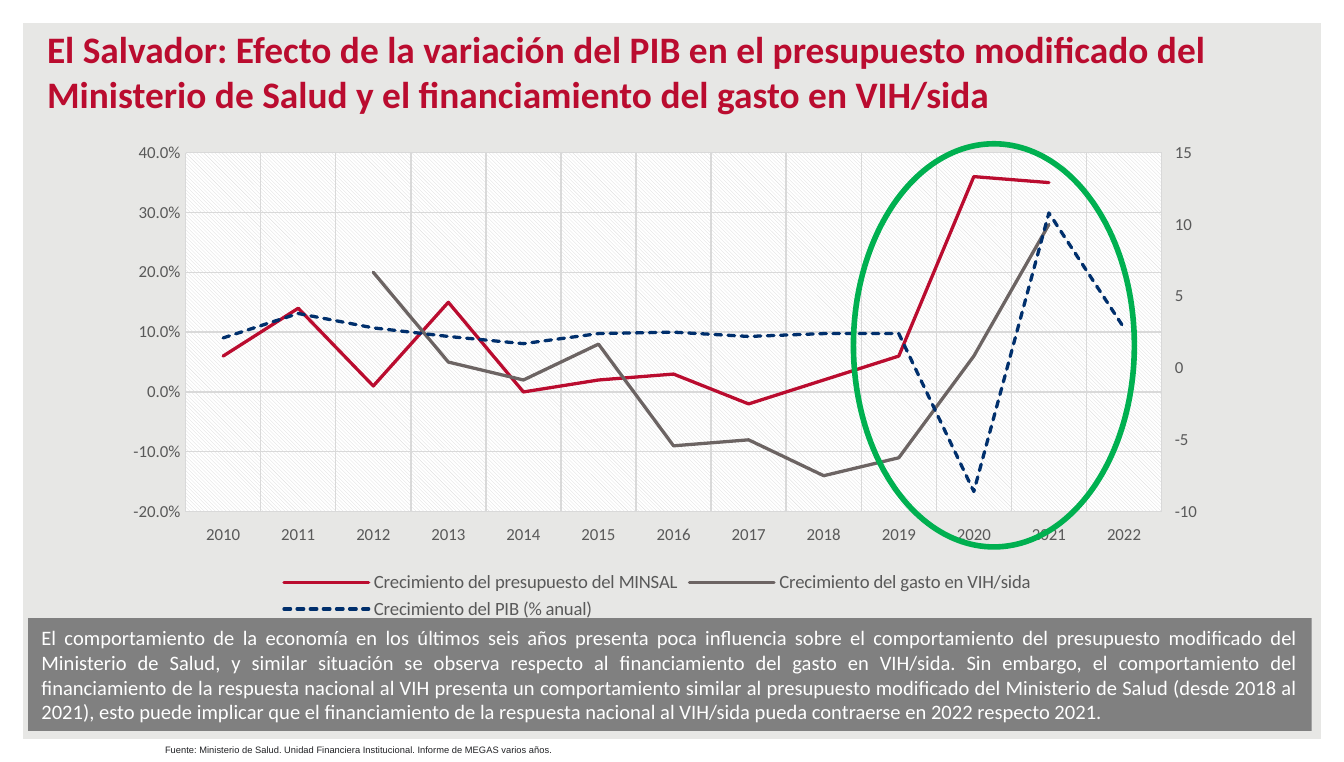
import copy

import pptx
import pptx.chart.axis
import pptx.chart.data
import pptx.dml.color
import pptx.enum.chart
import pptx.enum.dml
import pptx.enum.shapes
import pptx.enum.text
import pptx.oxml
import pptx.oxml.ns
import pptx.util

Inches = pptx.util.Inches
RGBColor = pptx.dml.color.RGBColor
SHAPES = pptx.enum.shapes.MSO_SHAPE
ALIGN = pptx.enum.text.PP_ALIGN
TICK = pptx.enum.chart.XL_TICK_MARK
LABEL_POSITION = pptx.enum.chart.XL_TICK_LABEL_POSITION

RED = RGBColor(0xBA, 0x0C, 0x2F)
WARM_GRAY = RGBColor(0x6C, 0x64, 0x63)
NAVY = RGBColor(0x00, 0x2F, 0x6C)
GREEN = RGBColor(0x00, 0xB0, 0x50)
BANNER_GRAY = RGBColor(0x80, 0x80, 0x80)
BACKGROUND = RGBColor(0xE7, 0xE7, 0xE5)
GRID = RGBColor(0xD9, 0xD9, 0xD9)
LABEL = RGBColor(0x59, 0x59, 0x59)
SOURCE_INK = RGBColor(0x20, 0x21, 0x24)
WHITE = RGBColor(0xFF, 0xFF, 0xFF)

TITLE = (
    "El Salvador: Efecto de la variación del PIB en el presupuesto modificado del "
    "Ministerio de Salud y el financiamiento del gasto en VIH/sida"
)
ANALYSIS = (
    "El comportamiento de la economía en los últimos seis años presenta poca influencia "
    "sobre el comportamiento del presupuesto modificado del Ministerio de Salud, y similar "
    "situación se observa respecto al financiamiento del gasto en VIH/sida. Sin embargo, el "
    "comportamiento del financiamiento de la respuesta nacional al VIH presenta un "
    "comportamiento similar al presupuesto modificado del Ministerio de Salud (desde 2018 al "
    "2021), esto puede implicar que el financiamiento de la respuesta nacional al VIH/sida "
    "pueda contraerse en 2022 respecto 2021."
)
SOURCE = (
    "Fuente: Ministerio de Salud. Unidad Financiera Institucional. "
    "Informe de MEGAS varios años."
)
YEARS = [str(year) for year in range(2010, 2023)]
GROWTH = [
    ("Crecimiento del presupuesto del MINSAL", RED,
     [0.06, 0.14, 0.01, 0.15, 0, 0.02, 0.03, -0.02, 0.02, 0.06, 0.36, 0.35, None]),
    ("Crecimiento del gasto en VIH/sida", WARM_GRAY,
     [0.19, None, 0.2, 0.05, 0.02, 0.08, -0.09, -0.08, -0.14, -0.11, 0.06, 0.28, None]),
    ("Crecimiento del PIB (% anual)", NAVY,
     [2.1, 3.8, 2.8, 2.2, 1.7, 2.4, 2.5, 2.2, 2.4, 2.4, -8.6, 10.8, 2.8]),
]
PLOT_LAYOUT = {"x": 0.07, "y": 0.04, "w": 0.89, "h": 0.73}


def apply(target, values):
    for attribute, value in values.items():
        setattr(target, attribute, value)


def style_font(font, size, color, name="Calibri", bold=False):
    apply(font, {"size": pptx.util.Pt(size), "name": name, "bold": bold})
    font.color.rgb = color


def style_line(line, color, width):
    line.color.rgb = color
    line.width = pptx.util.Pt(width)


def write(frame, text, size, color, align=ALIGN.LEFT, **font_values):
    frame.word_wrap = True
    paragraph = frame.paragraphs[0]
    paragraph.alignment = align
    run = paragraph.add_run()
    run.text = text
    style_font(run.font, size, color, **font_values)


def add_title(slide):
    title = slide.shapes.title
    apply(title, {"left": Inches(0.25), "top": Inches(0.22),
                  "width": Inches(9.51), "height": Inches(0.69)})
    apply(title.text_frame, {
        "vertical_anchor": pptx.enum.text.MSO_ANCHOR.BOTTOM,
        "auto_size": pptx.enum.text.MSO_AUTO_SIZE.NONE,
    })
    write(title.text_frame, TITLE, 20, RED, bold=True)


def add_plain_shape(slide, kind, left, top, width, height, fill=None):
    shape = slide.shapes.add_shape(
        kind, Inches(left), Inches(top), Inches(width), Inches(height))
    shape.shadow.inherit = False
    shape.line.fill.background()
    if fill is None:
        shape.fill.background()
    else:
        shape.fill.solid()
        shape.fill.fore_color.rgb = fill
    return shape


def style_axes(chart):
    years, percent = chart.category_axis, chart.value_axis
    for axis in (years, percent):
        style_font(axis.tick_labels.font, 9, LABEL)
        axis.has_major_gridlines = True
        style_line(axis.major_gridlines.format.line, GRID, 0.75)
        axis.minor_tick_mark = TICK.NONE
    apply(years, {"major_tick_mark": TICK.OUTSIDE,
                  "tick_label_position": LABEL_POSITION.LOW})
    style_line(years.format.line, GRID, 0.75)
    apply(percent, {"minimum_scale": -0.2, "maximum_scale": 0.4,
                    "major_unit": 0.1, "major_tick_mark": TICK.NONE})
    percent.format.line.fill.background()
    apply(percent.tick_labels, {"number_format": "0.0%",
                                "number_format_is_linked": False})


def cross_at_maximum(axis):
    for crossing in axis.xpath("c:crosses | c:crossesAt"):
        axis.remove(crossing)
    axis.xpath("c:crossAx")[0].addnext(pptx.oxml.parse_xml(
        f'<c:crosses {pptx.oxml.ns.nsdecls("c")} val="max"/>'))


def move_gdp_to_right_axis(plot_area):
    left_lines = plot_area.xpath("c:lineChart")[0]
    left_axes = plot_area.xpath("c:catAx | c:valAx")
    right_lines = copy.deepcopy(left_lines)
    left_lines.remove(left_lines.xpath("c:ser")[-1])
    for series in right_lines.xpath("c:ser")[:-1]:
        right_lines.remove(series)
    left_lines.addnext(right_lines)
    right_axes = [copy.deepcopy(axis) for axis in left_axes]
    for axis in right_axes:
        left_axes[-1].addnext(axis)

    right_ids = {axis.xpath("c:axId")[0].get("val"): str(number)
                 for number, axis in enumerate(left_axes, 5001)}
    for part in [right_lines, *right_axes]:
        for reference in part.xpath("c:axId | c:crossAx"):
            reference.set("val", right_ids[reference.get("val")])

    hidden_years = pptx.chart.axis.CategoryAxis(right_axes[0])
    gdp_percent = pptx.chart.axis.ValueAxis(right_axes[1])
    for axis in (hidden_years, gdp_percent):
        axis.has_major_gridlines = False
    hidden_years.visible = False
    cross_at_maximum(right_axes[1])
    right_axes[1].xpath("c:axPos")[0].set("val", "r")
    apply(gdp_percent, {"minimum_scale": -10, "maximum_scale": 15, "major_unit": 5,
                        "tick_label_position": LABEL_POSITION.HIGH})
    gdp_percent.tick_labels.number_format = "General"


def style_plot_area(plot_area):
    for line in plot_area.xpath("c:lineChart/c:ser/c:spPr/a:ln"):
        line.set("cap", "rnd")
    for layout in plot_area.xpath("c:layout"):
        plot_area.remove(layout)
    sizes = "".join(f'<c:{key} val="{value}"/>' for key, value in PLOT_LAYOUT.items())
    plot_area.insert(0, pptx.oxml.parse_xml(
        f'<c:layout {pptx.oxml.ns.nsdecls("c")}><c:manualLayout>'
        '<c:layoutTarget val="inner"/><c:xMode val="edge"/><c:yMode val="edge"/>'
        f'{sizes}</c:manualLayout></c:layout>'))
    plot_area.append(pptx.oxml.parse_xml(
        f'<c:spPr {pptx.oxml.ns.nsdecls("c", "a")}><a:pattFill prst="ltDnDiag">'
        f'<a:fgClr><a:srgbClr val="{GRID}"/></a:fgClr>'
        f'<a:bgClr><a:srgbClr val="{WHITE}"/></a:bgClr></a:pattFill></c:spPr>'))


def add_growth_chart(slide):
    data = pptx.chart.data.CategoryChartData()
    data.categories = YEARS
    for name, _, values in GROWTH:
        data.add_series(name, values)
    chart = slide.shapes.add_chart(
        pptx.enum.chart.XL_CHART_TYPE.LINE, Inches(0.81), Inches(0.99),
        Inches(8.16), Inches(3.66), data).chart
    apply(chart, {"has_title": False, "has_legend": True})
    apply(chart.font, {"name": "Calibri", "size": pptx.util.Pt(10)})
    apply(chart.legend, {"position": pptx.enum.chart.XL_LEGEND_POSITION.BOTTOM,
                         "include_in_layout": False})
    style_font(chart.legend.font, 10, LABEL)
    plot = chart.plots[0]
    plot.vary_by_categories = False
    for series, (_, color, _) in zip(plot.series, GROWTH):
        series.smooth = False
        style_line(series.format.line, color, 1.75)
    plot.series[2].format.line.dash_style = pptx.enum.dml.MSO_LINE.SQUARE_DOT
    style_axes(chart)
    plot_area = chart.element.xpath("c:chart/c:plotArea")[0]
    move_gdp_to_right_axis(plot_area)
    style_plot_area(plot_area)


def main():
    deck = pptx.Presentation()
    apply(deck, {"slide_width": Inches(10), "slide_height": Inches(5.67)})
    slide = deck.slides.add_slide(deck.slide_layouts[5])
    slide.background.fill.solid()
    slide.background.fill.fore_color.rgb = BACKGROUND
    border = add_plain_shape(slide, SHAPES.FRAME, 0, 0, 10, 5.67, WHITE)
    border.adjustments[0] = 0.03
    add_title(slide)
    add_growth_chart(slide)
    source = slide.shapes.add_textbox(
        Inches(1.13), Inches(5.49), Inches(8.54), Inches(0.19))
    write(source.text_frame, SOURCE, 5, SOURCE_INK, name="Arial")
    highlight = add_plain_shape(slide, SHAPES.OVAL, 6.35, 1.07, 2.09, 3)
    style_line(highlight.line, GREEN, 3)
    banner = add_plain_shape(slide, SHAPES.RECTANGLE, 0.21, 4.6, 9.55, 0.84, BANNER_GRAY)
    write(banner.text_frame, ANALYSIS, 11, WHITE, ALIGN.JUSTIFY)
    deck.save("out.pptx")


if __name__ == "__main__":
    main()
